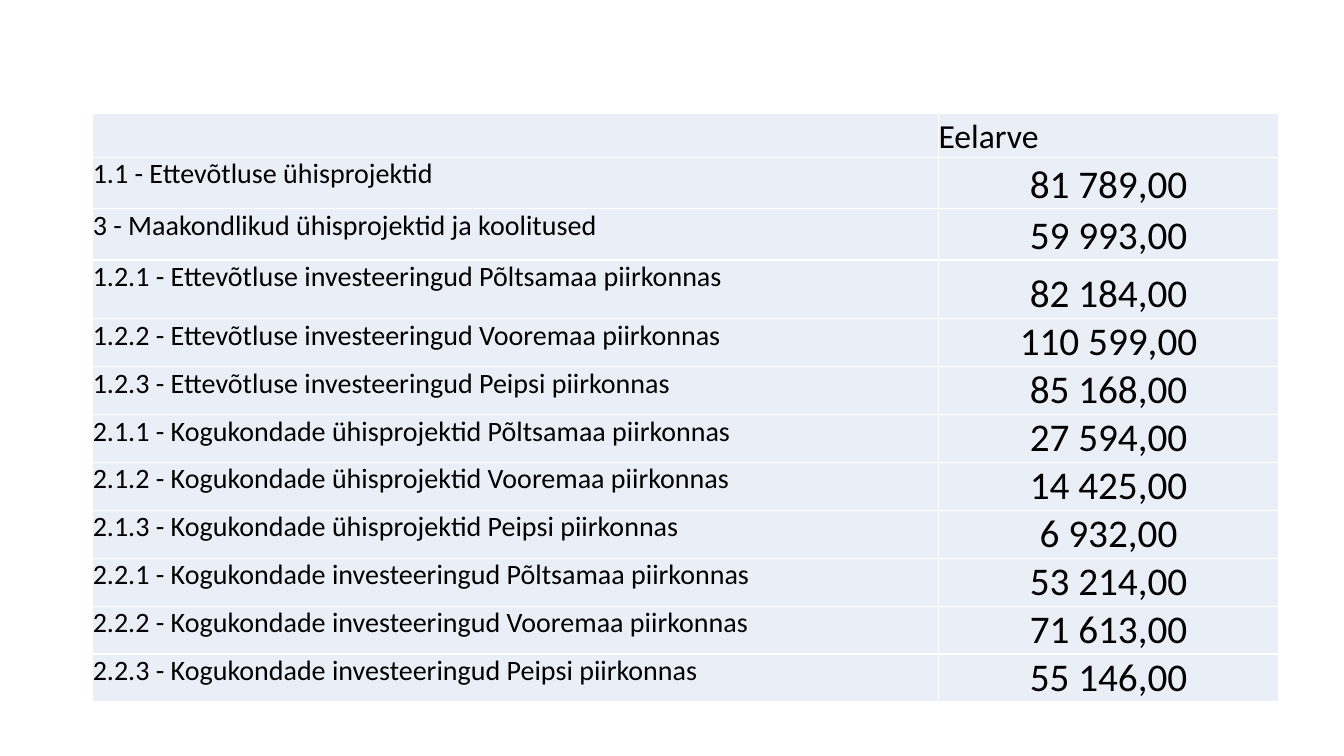
import pptx
import pptx.dml.color
import pptx.enum.text
import pptx.util

Inches = pptx.util.Inches
ALIGN = pptx.enum.text.PP_ALIGN
ANCHOR = pptx.enum.text.MSO_ANCHOR

THEME = {
    "font": "Calibri",
    "text": pptx.dml.color.RGBColor.from_string("000000"),
    "cell": pptx.dml.color.RGBColor.from_string("EAEFF7"),
    "header_size": 24,
    "measure_size": 20,
    "amount_size": 28,
}

BUDGET = [
    ("1.1 - Ettevõtluse ühisprojektid", "81 789,00"),
    ("3 - Maakondlikud ühisprojektid ja koolitused", "59 993,00"),
    ("1.2.1 - Ettevõtluse investeeringud Põltsamaa piirkonnas", "82 184,00"),
    ("1.2.2 - Ettevõtluse investeeringud Vooremaa piirkonnas", "110 599,00"),
    ("1.2.3 - Ettevõtluse investeeringud Peipsi piirkonnas", "85 168,00"),
    ("2.1.1 - Kogukondade ühisprojektid Põltsamaa piirkonnas", "27 594,00"),
    ("2.1.2 - Kogukondade ühisprojektid Vooremaa piirkonnas", "14 425,00"),
    ("2.1.3 - Kogukondade ühisprojektid Peipsi piirkonnas", "6 932,00"),
    ("2.2.1 - Kogukondade investeeringud Põltsamaa piirkonnas", "53 214,00"),
    ("2.2.2 - Kogukondade investeeringud Vooremaa piirkonnas", "71 613,00"),
    ("2.2.3 - Kogukondade investeeringud Peipsi piirkonnas", "55 146,00"),
]

COLUMN_WIDTHS = [8.39, 3.37]
ROW_HEIGHT = 0.43
TALLER_ROWS = {1: 0.51, 2: 0.51, 3: 0.58}


def write_cell(cell, text, size, align=ALIGN.LEFT, anchor=ANCHOR.TOP):
    cell.margin_left = cell.margin_right = cell.margin_top = cell.margin_bottom = 0
    cell.vertical_anchor = anchor
    paragraph = cell.text_frame.paragraphs[0]
    paragraph.alignment = align
    run = paragraph.add_run()
    run.text = text
    run.font.name = THEME["font"]
    run.font.size = pptx.util.Pt(size)
    run.font.color.rgb = THEME["text"]


presentation = pptx.Presentation()
presentation.slide_width = Inches(13.33)
presentation.slide_height = Inches(7.5)
slide = presentation.slides.add_slide(presentation.slide_layouts[6])

row_heights = [TALLER_ROWS.get(row, ROW_HEIGHT) for row in range(len(BUDGET) + 1)]
table = slide.shapes.add_table(
    len(row_heights), len(COLUMN_WIDTHS), Inches(0.92), Inches(1.13),
    Inches(sum(COLUMN_WIDTHS)), Inches(sum(row_heights)),
).table
table.first_row = False
table.horz_banding = False

for column, width in zip(table.columns, COLUMN_WIDTHS):
    column.width = Inches(width)
for row, height in zip(table.rows, row_heights):
    row.height = Inches(height)
for cell in table.iter_cells():
    cell.fill.solid()
    cell.fill.fore_color.rgb = THEME["cell"]

write_cell(table.cell(0, 1), "Eelarve", THEME["header_size"], anchor=ANCHOR.BOTTOM)
for row, (measure, amount) in enumerate(BUDGET, start=1):
    write_cell(table.cell(row, 0), measure, THEME["measure_size"])
    write_cell(table.cell(row, 1), amount, THEME["amount_size"],
               align=ALIGN.CENTER, anchor=ANCHOR.BOTTOM)

presentation.save("out.pptx")
